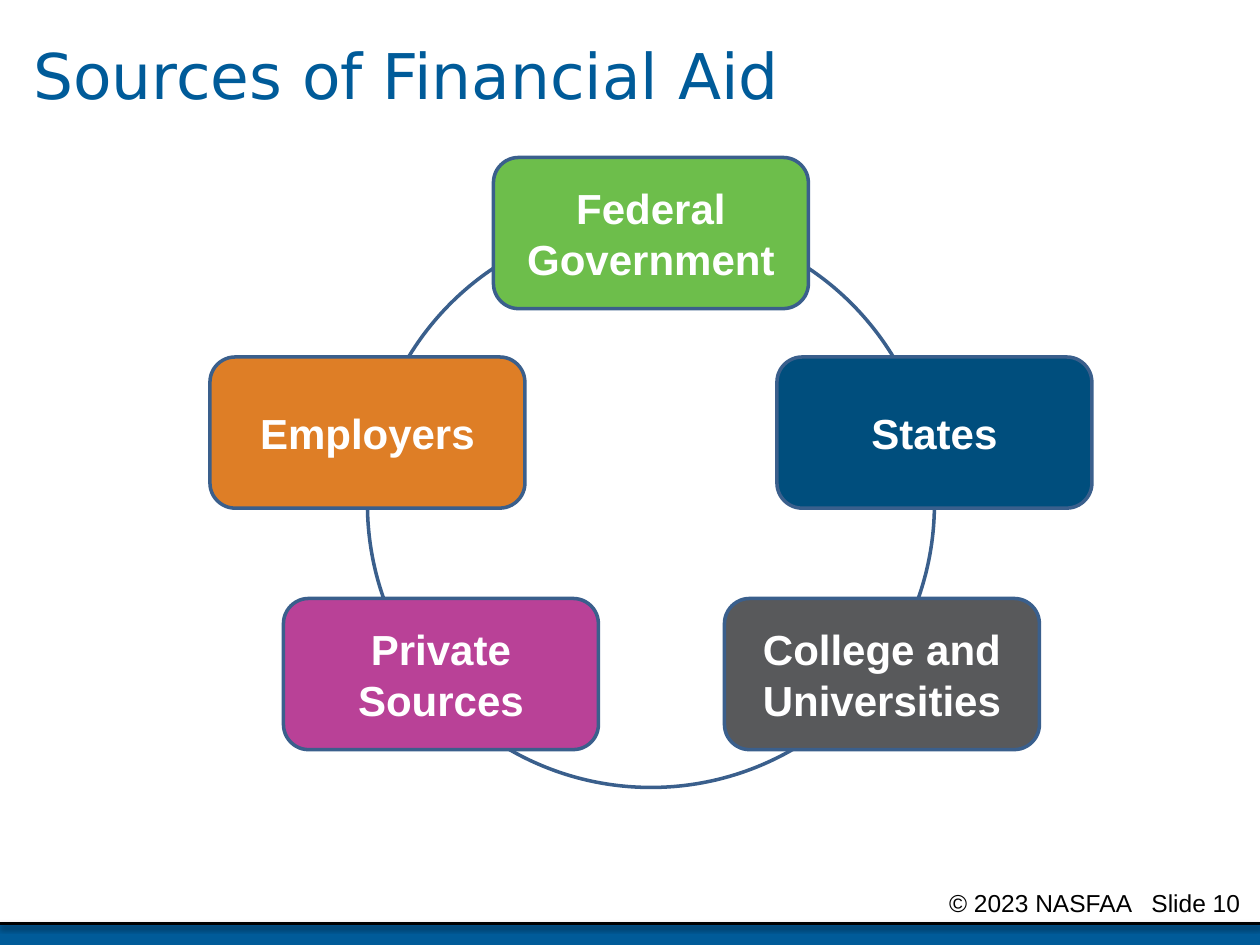
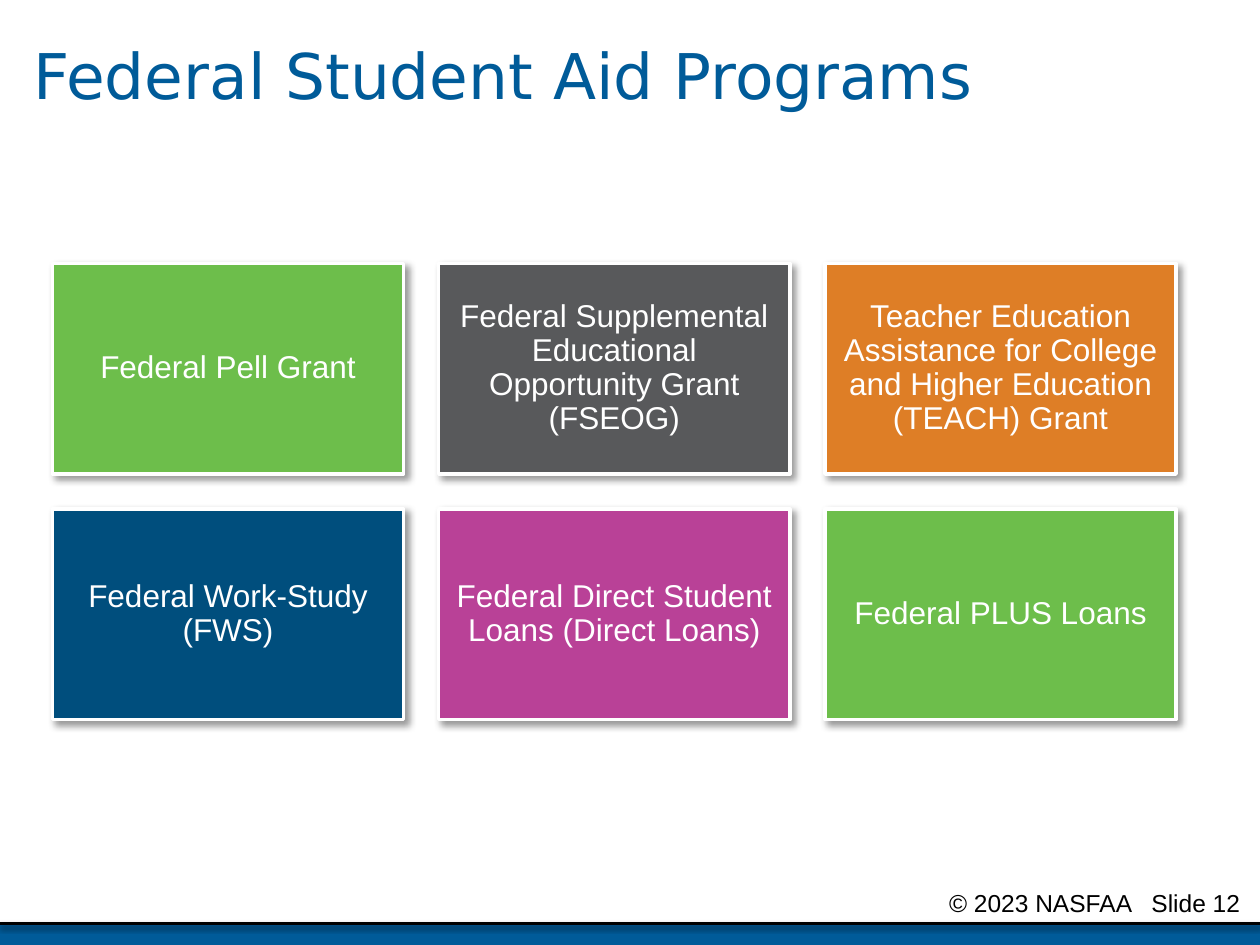
"""Builds two slides on the sources and programs of student financial aid."""
from lxml.etree import SubElement
from pptx import Presentation
from pptx.dml.color import RGBColor
from pptx.enum.shapes import MSO_CONNECTOR, MSO_SHAPE
from pptx.enum.text import MSO_ANCHOR, PP_ALIGN
from pptx.oxml.ns import qn
from pptx.util import Pt

COLORS = {
    "title": "005B99",
    "outline": "3A5F8C",
    "green": "6DBE4B",
    "navy": "004E7D",
    "gray": "58595B",
    "magenta": "B94197",
    "orange": "DE7E26",
    "white": "FFFFFF",
    "black": "000000",
}
SLIDE_WIDTH, SLIDE_HEIGHT = 720, 540
BAND_TOP = 527.8
LINE_WIDTH = 2

RING_CENTER_X, RING_TOP, RING_SIZE = 372, 126, 324
SOURCE_WIDTH, SOURCE_HEIGHT = 180, 86.4
SOURCES = [
    ("Federal Government", "green", 0, 90),
    ("States", "navy", 162, 204),
    ("College and Universities", "gray", 132, 342),
    ("Private Sources", "magenta", -120, 342),
    ("Employers", "orange", -162, 204),
]

GRID_LEFT, GRID_TOP, GRID_COLUMNS = 30, 150.5, 3
TILE_WIDTH, TILE_HEIGHT, TILE_GAP = 200.7, 120.4, 20
PROGRAMS = [
    ("Federal Pell Grant", "green"),
    ("Federal Supplemental Educational Opportunity Grant (FSEOG)", "gray"),
    ("Teacher Education Assistance for College and Higher Education (TEACH) Grant", "orange"),
    ("Federal Work-Study (FWS)", "navy"),
    ("Federal Direct Student Loans (Direct Loans)", "magenta"),
    ("Federal PLUS Loans", "green"),
]


def color(name):
    """Return the named colour."""
    return RGBColor.from_string(COLORS[name])


def add_text(shape, text, size, color_name, font="Arial", bold=False,
             align=PP_ALIGN.CENTER, anchor=MSO_ANCHOR.MIDDLE, spacing=None):
    """Write one paragraph into a shape and return it."""
    frame = shape.text_frame
    frame.word_wrap = True
    frame.vertical_anchor = anchor
    paragraph = frame.paragraphs[0]
    paragraph.alignment = align
    if spacing:
        paragraph.line_spacing = spacing
    run = paragraph.add_run()
    run.text = text
    run.font.name = font
    run.font.size = Pt(size)
    run.font.bold = bold
    run.font.color.rgb = color(color_name)
    return paragraph


def add_box(slide, kind, left, top, width, height, fill=None, outline=None):
    """Add a preset shape without shadow."""
    shape = slide.shapes.add_shape(kind, Pt(left), Pt(top), Pt(width), Pt(height))
    shape.shadow.inherit = False
    if fill:
        shape.fill.solid()
        shape.fill.fore_color.rgb = color(fill)
    else:
        shape.fill.background()
    if outline:
        shape.line.color.rgb = color(outline)
        shape.line.width = Pt(LINE_WIDTH)
    else:
        shape.line.fill.background()
    return shape


def add_shadow(shape, opacity, blur, distance, degrees):
    """Give a shape or connector an outer shadow."""
    properties = shape._element.spPr
    effects = properties.find(qn("a:effectLst"))
    if effects is None:
        effects = SubElement(properties, qn("a:effectLst"))
    shadow = SubElement(effects, qn("a:outerShdw"), blurRad=str(Pt(blur)),
                        dist=str(Pt(distance)), dir=str(degrees * 60000),
                        algn="tl", rotWithShape="0")
    tint = SubElement(shadow, qn("a:srgbClr"), val=COLORS["black"])
    SubElement(tint, qn("a:alpha"), val=str(opacity * 1000))


def add_footer(slide, number):
    """Add the bottom band, its rule and the copyright line."""
    add_box(slide, MSO_SHAPE.RECTANGLE, 0, BAND_TOP, SLIDE_WIDTH,
            SLIDE_HEIGHT - BAND_TOP, "title")
    rule = slide.shapes.add_connector(MSO_CONNECTOR.STRAIGHT, Pt(0), Pt(BAND_TOP),
                                      Pt(SLIDE_WIDTH), Pt(BAND_TOP))
    rule.line.color.rgb = color("black")
    rule.line.width = Pt(LINE_WIDTH)
    add_shadow(rule, 38, 3.1, 1.6, 90)

    footer = slide.shapes.add_textbox(Pt(450), Pt(504), Pt(270), Pt(18))
    footer.text_frame.margin_left = Pt(92.3)
    paragraph = add_text(footer, f"© 2023 NASFAA\tSlide {number}", 14, "black",
                         align=PP_ALIGN.LEFT, anchor=MSO_ANCHOR.TOP)
    tabs = SubElement(paragraph._p.get_or_add_pPr(), qn("a:tabLst"))
    SubElement(tabs, qn("a:tab"), pos=str(Pt(166.4)), algn="r")


def add_titled_slide(presentation, title, number):
    """Add a blank slide with the shared footer and title."""
    slide = presentation.slides.add_slide(presentation.slide_layouts[6])
    add_footer(slide, number)
    title_box = slide.shapes.add_textbox(Pt(12), Pt(0), Pt(696), Pt(90))
    add_text(title_box, title, 36, "title", "DejaVu Sans",
             align=PP_ALIGN.LEFT, spacing=0.9)
    return slide


def add_source_ring(slide):
    """Draw the ring and the aid sources placed around it."""
    add_box(slide, MSO_SHAPE.OVAL, RING_CENTER_X - RING_SIZE / 2, RING_TOP,
            RING_SIZE, RING_SIZE, outline="outline")
    for name, fill, offset, top in SOURCES:
        left = RING_CENTER_X + offset - SOURCE_WIDTH / 2
        source = add_box(slide, MSO_SHAPE.ROUNDED_RECTANGLE, left, top,
                         SOURCE_WIDTH, SOURCE_HEIGHT, fill, "outline")
        add_text(source, name, 24, "white", bold=True)


def add_program_grid(slide):
    """Lay out the aid programs as a grid of shadowed tiles."""
    for index, (name, fill) in enumerate(PROGRAMS):
        row, column = divmod(index, GRID_COLUMNS)
        tile = add_box(slide, MSO_SHAPE.RECTANGLE,
                       GRID_LEFT + column * (TILE_WIDTH + TILE_GAP),
                       GRID_TOP + row * (TILE_HEIGHT + TILE_GAP),
                       TILE_WIDTH, TILE_HEIGHT, fill, "white")
        add_shadow(tile, 40, 4, 3, 45)
        frame = tile.text_frame
        frame.margin_left = frame.margin_right = Pt(5)
        frame.margin_top = frame.margin_bottom = Pt(5)
        add_text(tile, name, 18, "white", spacing=0.9)


def main():
    """Build and save the presentation."""
    presentation = Presentation()
    presentation.slide_width = Pt(SLIDE_WIDTH)
    presentation.slide_height = Pt(SLIDE_HEIGHT)
    add_source_ring(add_titled_slide(presentation, "Sources of Financial Aid", 10))
    add_program_grid(add_titled_slide(presentation, "Federal Student Aid Programs", 12))
    presentation.save("out.pptx")


if __name__ == "__main__":
    main()
